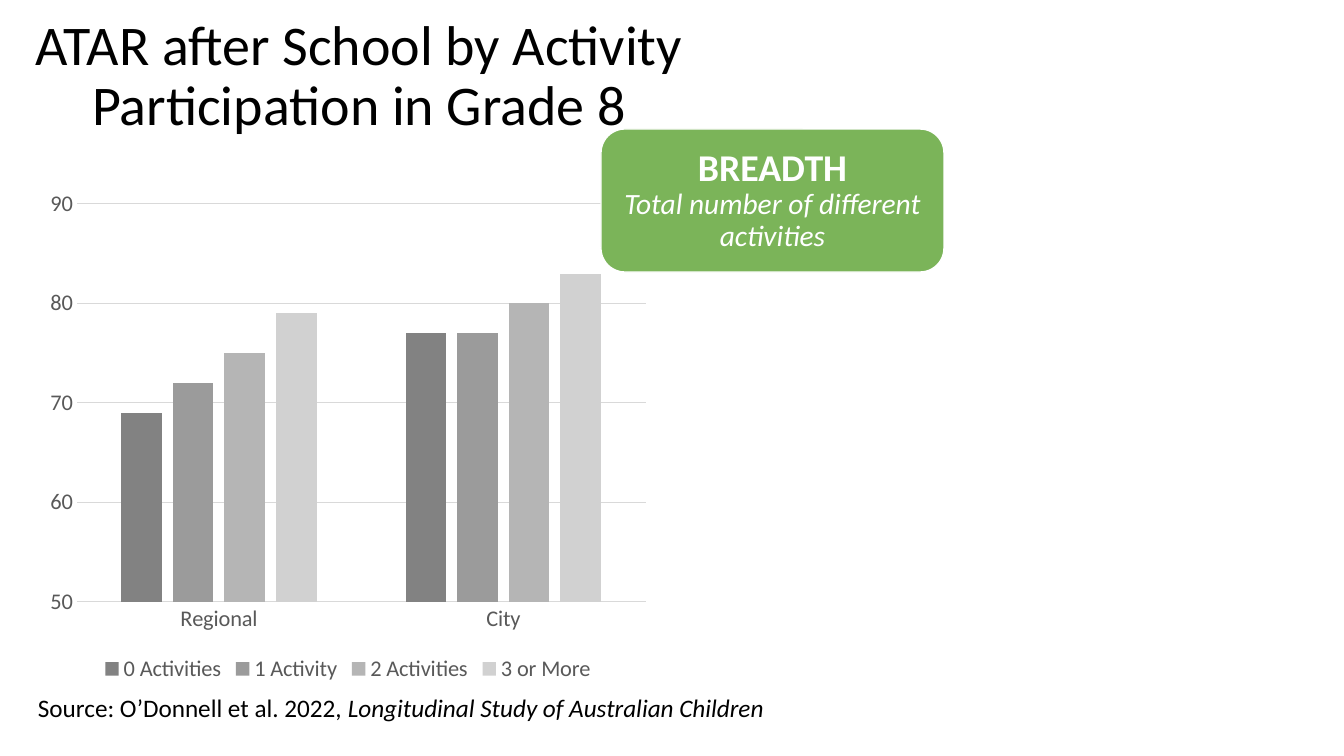
from pptx import Presentation
from pptx.chart.data import CategoryChartData
from pptx.dml.color import RGBColor
from pptx.enum.chart import XL_CHART_TYPE as ChartType, XL_LEGEND_POSITION as LegendPosition
from pptx.enum.chart import XL_TICK_MARK as TickMark
from pptx.enum.shapes import MSO_SHAPE as Shape
from pptx.enum.text import MSO_ANCHOR as Anchor, MSO_AUTO_SIZE as AutoSize, PP_ALIGN as Align
from pptx.util import Emu, Pt

# Content
TITLE = "ATAR after School by Activity Participation in Grade 8"
BREADTH = ("BREADTH", "Total number of different activities")
SOURCE = ("Source: O’Donnell et al. 2022, ", "Longitudinal Study of Australian Children")
REGIONS = ["Regional", "City"]
ATAR = [
    ("0 Activities", (69, 77), RGBColor(0x82, 0x82, 0x82)),
    ("1 Activity", (72, 77), RGBColor(0x9B, 0x9B, 0x9B)),
    ("2 Activities", (75, 80), RGBColor(0xB5, 0xB5, 0xB5)),
    ("3 or More", (79, 83), RGBColor(0xD1, 0xD1, 0xD1)),
]

# Style
FONT = "Calibri"
BLACK = RGBColor(0, 0, 0)
WHITE = RGBColor(0xFF, 0xFF, 0xFF)
GREEN = RGBColor(0x7B, 0xB4, 0x59)
LABEL_GREY = RGBColor(0x59, 0x59, 0x59)
GRID_GREY = RGBColor(0xD9, 0xD9, 0xD9)

# Places in px: left, top, width, height
PX = 914400 / 100.8
SLIDE_SIZE = (1344, 756)
TITLE_BOX = (6, 0, 706, 143)
CHART_BOX = (38, 180, 620, 507)
BREADTH_BOX = (601, 129, 343, 143)
SOURCE_BOX = (28, 687, 749, 41)
BREADTH_INSET = 15


def px(length):
    return Emu(round(length * PX))


def place(box):
    return [px(length) for length in box]


def style(font, size, color):
    font.name, font.size = FONT, Pt(size)
    font.color.rgb = color


def thin_line(line):
    line.color.rgb = GRID_GREY
    line.width = Pt(0.75)


def add_title(page):
    title = page.shapes.title
    title.left, title.top, title.width, title.height = place(TITLE_BOX)
    frame = title.text_frame
    frame.text = TITLE
    frame.auto_size = AutoSize.NONE
    frame.vertical_anchor = Anchor.BOTTOM
    para = frame.paragraphs[0]
    para.alignment, para.line_spacing = Align.CENTER, 0.9
    style(para.font, 40, BLACK)


def add_atar_chart(page):
    data = CategoryChartData()
    data.categories = REGIONS
    for name, values, _ in ATAR:
        data.add_series(name, values)
    chart = page.shapes.add_chart(ChartType.COLUMN_CLUSTERED, *place(CHART_BOX), data).chart
    chart.has_title = False
    style(chart.font, 16, LABEL_GREY)

    # Columns
    plot = chart.plots[0]
    plot.vary_by_categories = False
    plot.gap_width, plot.overlap = 219, -27
    for series, (_, _, color) in zip(plot.series, ATAR):
        series.format.fill.solid()
        series.format.fill.fore_color.rgb = color

    # Axes
    for axis in (chart.category_axis, chart.value_axis):
        axis.major_tick_mark = axis.minor_tick_mark = TickMark.NONE
        style(axis.tick_labels.font, 16, LABEL_GREY)
    thin_line(chart.category_axis.format.line)
    scores = chart.value_axis
    scores.minimum_scale, scores.maximum_scale, scores.major_unit = 50, 90, 10
    scores.format.line.fill.background()
    thin_line(scores.major_gridlines.format.line)

    # Legend
    chart.has_legend = True
    chart.legend.position = LegendPosition.BOTTOM
    chart.legend.include_in_layout = False
    style(chart.legend.font, 16, LABEL_GREY)


def add_breadth(page):
    box = page.shapes.add_shape(Shape.ROUNDED_RECTANGLE, *place(BREADTH_BOX))
    box.shadow.inherit = False
    box.fill.solid()
    box.fill.fore_color.rgb = GREEN
    box.line.color.rgb = WHITE
    box.line.width = Pt(1)
    frame = box.text_frame
    frame.word_wrap = True
    frame.vertical_anchor = Anchor.MIDDLE
    frame.margin_left = frame.margin_right = px(BREADTH_INSET)
    frame.margin_top = frame.margin_bottom = px(BREADTH_INSET)
    para = frame.paragraphs[0]
    para.alignment, para.line_spacing = Align.CENTER, 0.9
    heading, meaning = BREADTH
    span = para.add_run()
    span.text, span.font.bold = heading, True
    style(span.font, 27, WHITE)
    para.add_line_break()
    span = para.add_run()
    span.text, span.font.italic = meaning, True
    style(span.font, 21, WHITE)


def add_source(page):
    frame = page.shapes.add_textbox(*place(SOURCE_BOX)).text_frame
    frame.word_wrap = True
    frame.auto_size = AutoSize.SHAPE_TO_FIT_TEXT
    para = frame.paragraphs[0]
    style(para.font, 18, BLACK)
    authors, study = SOURCE
    para.add_run().text = authors
    span = para.add_run()
    span.text, span.font.italic = study, True


def main():
    deck = Presentation()
    deck.slide_width, deck.slide_height = place(SLIDE_SIZE)
    page = deck.slides.add_slide(deck.slide_layouts[5])
    add_title(page)
    add_atar_chart(page)
    add_breadth(page)
    add_source(page)
    deck.save("out.pptx")


if __name__ == "__main__":
    main()
